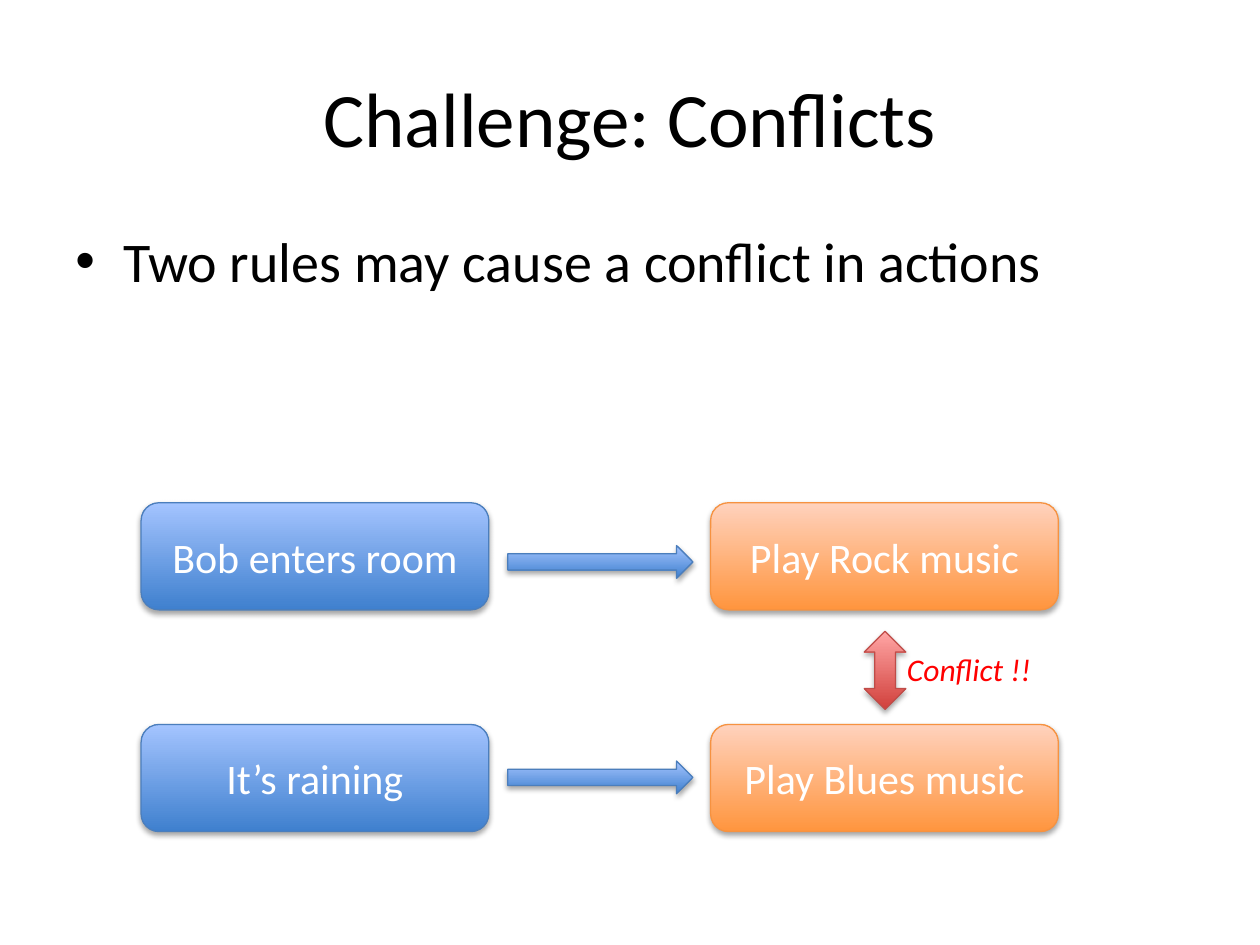
from lxml import etree
from pptx import Presentation, util as u
from pptx.dml.color import RGBColor
from pptx.enum import shapes, text
from pptx.oxml import ns

deck = Presentation()
deck.slide_width, deck.slide_height = u.Inches(10), u.Inches(7.5)
page = deck.slides.add_slide(deck.slide_layouts[6])
CELL_WIDTH, CELL_HEIGHT = deck.slide_width / 100, deck.slide_height / 75
KIND = shapes.MSO_SHAPE
BLUE = ("3F80CE", "A4C4FF", "4B7EBC")
ORANGE = ("FF953E", "FFD2BD", "F69240")
RED = ("D1403C", "FFA6A5", "BF4C48")


def color(value):
    return RGBColor.from_string(value)


def write(box, words, size, shade, frame_format, align=text.PP_ALIGN.LEFT, italic=None):
    for name, value in frame_format.items():
        setattr(box.text_frame, name, value)
    para = box.text_frame.paragraphs[0]
    para.alignment = align
    span = para.add_run()
    span.text = words
    span.font.color.rgb = color(shade)
    for name, value in {"name": "Calibri", "size": u.Pt(size), "italic": italic}.items():
        setattr(span.font, name, value)
    return para


middle = {"word_wrap": True, "vertical_anchor": text.MSO_ANCHOR.MIDDLE}
top = {"word_wrap": True, "vertical_anchor": text.MSO_ANCHOR.TOP}
label = {"word_wrap": False, "auto_size": text.MSO_AUTO_SIZE.SHAPE_TO_FIT_TEXT}
center = text.PP_ALIGN.CENTER

texts = [
    ((5, 3, 90, 12.5), "Challenge: Conflicts", 44, "000000", middle, center, None),
    ((5, 17.5, 90, 49.5), "Two rules may cause a conflict in actions", 32, "000000", top, text.PP_ALIGN.LEFT, None),
    ((71, 51.1, 12.6, 4), "Conflict !!", 18, "FF0000", label, text.PP_ALIGN.LEFT, True),
]

rules = [
    (39.9, 43.3, "Bob enters room", "Play Rock music"),
    (57.5, 60.4, "It’s raining", "Play Blues music"),
]
figures = [(KIND.UP_DOWN_ARROW, (68.6, 50.1, 3.3, 6.2), RED, "")]
for row, arrow_row, cause, action in rules:
    figures += [
        (KIND.ROUNDED_RECTANGLE, (11.2, row, 27.6, 8.5), BLUE, cause),
        (KIND.ROUNDED_RECTANGLE, (56.4, row, 27.6, 8.5), ORANGE, action),
        (KIND.RIGHT_ARROW, (40.3, arrow_row, 14.7, 2.6), BLUE, ""),
    ]

for kind, (left, upper, width, height), (dark, light, edge), words in figures:
    box = page.shapes.add_shape(
        kind, int(left * CELL_WIDTH), int(upper * CELL_HEIGHT), int(width * CELL_WIDTH), int(height * CELL_HEIGHT)
    )
    box.fill.gradient()
    box.fill.gradient_angle = 90
    for stop, shade in zip(box.fill.gradient_stops, (dark, light)):
        stop.color.rgb = color(shade)
    box.line.color.rgb = color(edge)
    box.line.width = u.Pt(0.75)
    box.shadow.inherit = False
    effects = box.element.spPr.find(ns.qn("a:effectLst"))
    shadow = etree.SubElement(
        effects, ns.qn("a:outerShdw"), blurRad=str(u.Pt(3.1)), dist=str(u.Pt(1.8)), dir="5400000", rotWithShape="0"
    )
    black = etree.SubElement(shadow, ns.qn("a:srgbClr"), val="000000")
    etree.SubElement(black, ns.qn("a:alpha"), val="35000")
    if words:
        write(box, words, 24, "FFFFFF", middle, center)

for (left, upper, width, height), words, size, shade, frame_format, align, italic in texts:
    box = page.shapes.add_textbox(
        int(left * CELL_WIDTH), int(upper * CELL_HEIGHT), int(width * CELL_WIDTH), int(height * CELL_HEIGHT)
    )
    para = write(box, words, size, shade, frame_format, align, italic)
    if frame_format is top:
        props = para._p.get_or_add_pPr()
        props.set("marL", str(u.Inches(0.38)))
        props.set("indent", str(u.Inches(-0.38)))
        before = etree.SubElement(props, ns.qn("a:spcBef"))
        etree.SubElement(before, ns.qn("a:spcPct"), val="20000")
        etree.SubElement(props, ns.qn("a:buFont"), typeface="Arial")
        etree.SubElement(props, ns.qn("a:buChar"), char="•")

deck.save("out.pptx")
